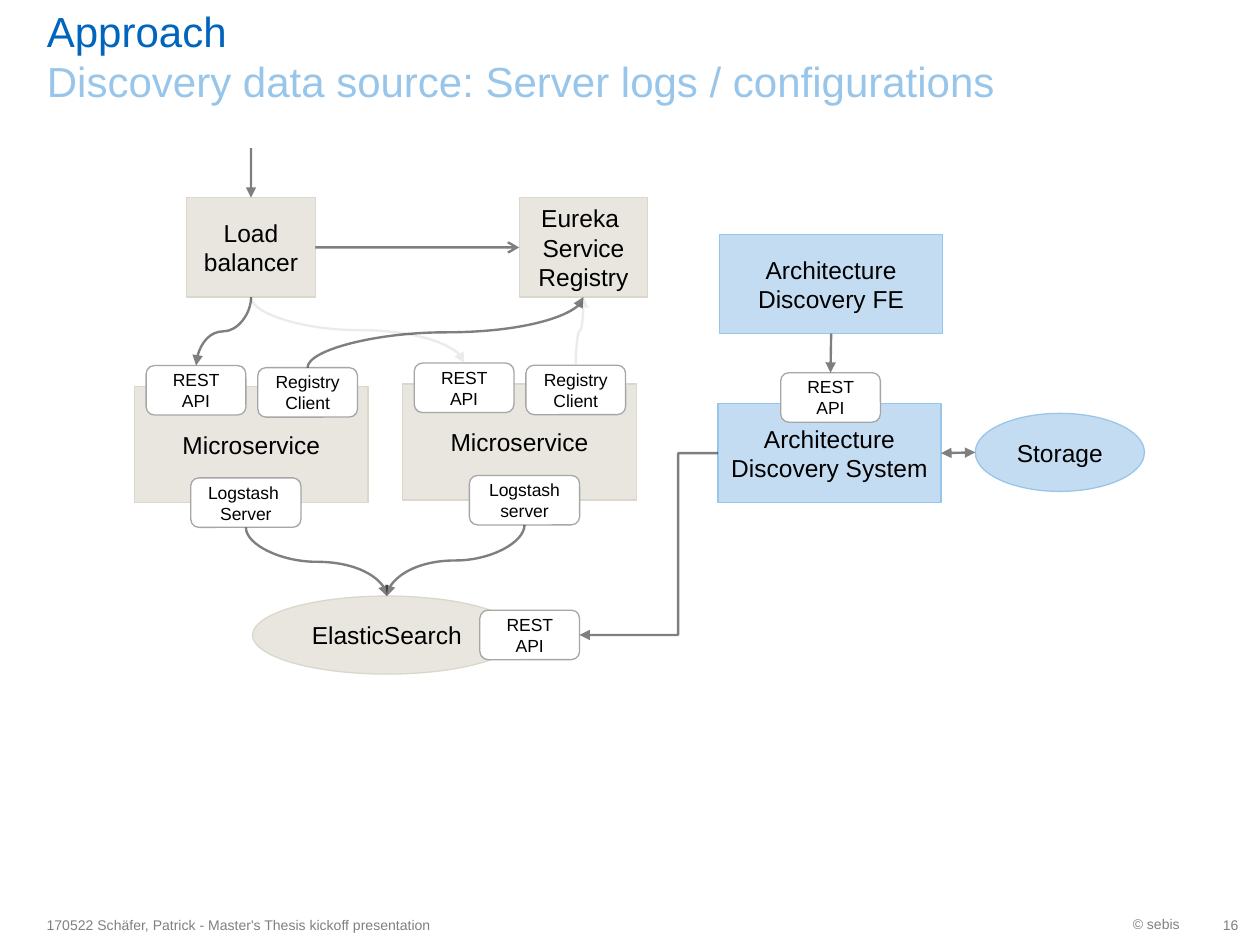
import pptx
import pptx.util
import pptx.dml.color
import pptx.enum.shapes
import pptx.enum.text
import pptx.oxml.ns
from dataclasses import dataclass
from lxml import etree

Pt = pptx.util.Pt
SHAPE = pptx.enum.shapes.MSO_SHAPE
ROUTE = pptx.enum.shapes.MSO_CONNECTOR
ALIGN = pptx.enum.text.PP_ALIGN
ANCHOR = pptx.enum.text.MSO_ANCHOR
TOP, LEFT, BOTTOM, RIGHT = range(4)  # connection sites of a rectangle


@dataclass(frozen=True)
class Theme:
    font: str = "Arial"
    title: str = "0065BD"
    subtitle: str = "98C6EA"
    footer: str = "808080"
    text: str = "000000"
    arrow: str = "000000"
    faint_arrow: str = "D9D9D9"
    service: tuple = ("E8E6DF", "DAD7CB")    # fill, outline
    discovery: tuple = ("C4DCF2", "98C6EA")
    interface: tuple = ("FFFFFF", "A6A6A6")
    title_size: int = 24
    node_size: int = 14
    interface_size: int = 10
    footer_size: int = 8
    outline: float = 0.75
    arrow_width: float = 1.35


THEME = Theme()
INTERFACE_SIZE = (57, 28.3)


def rgb(value):
    return pptx.dml.color.RGBColor.from_string(value)


def set_font(font, size, color):
    font.name, font.size = THEME.font, Pt(size)
    font.color.rgb = rgb(color)


def add_node(slide, text, box, colors=THEME.service, kind=SHAPE.RECTANGLE,
             size=THEME.node_size):
    node = slide.shapes.add_shape(kind, *map(Pt, box))
    node.shadow.inherit = False
    fill, outline = colors
    node.fill.solid()
    node.fill.fore_color.rgb = rgb(fill)
    node.line.color.rgb = rgb(outline)
    node.line.width = Pt(THEME.outline)
    frame = node.text_frame
    frame.text, frame.word_wrap = text, True
    frame.vertical_anchor = ANCHOR.MIDDLE
    for paragraph in frame.paragraphs:
        paragraph.alignment = ALIGN.CENTER
        set_font(paragraph.font, size, THEME.text)
    return node


def add_interface(slide, text, left, top, width=INTERFACE_SIZE[0]):
    return add_node(slide, text, (left, top, width, INTERFACE_SIZE[1]),
                    THEME.interface, SHAPE.ROUNDED_RECTANGLE, THEME.interface_size)


def site_point(node, site):
    x = {LEFT: node.left, RIGHT: node.left + node.width}
    y = {TOP: node.top, BOTTOM: node.top + node.height}
    return (x.get(site, node.left + node.width // 2),
            y.get(site, node.top + node.height // 2))


def add_arrow(slide, start, end, route=ROUTE.STRAIGHT, color=THEME.arrow,
              head=None, tail="triangle", bend=None):
    """Draw a half-transparent arrow between two points."""
    (x1, y1), (x2, y2) = start, end
    if route == ROUTE.CURVE:
        # Vertical S-curves are horizontal ones turned by 90 degrees
        cx, cy = (x1 + x2) // 2, (y1 + y2) // 2
        x1, y1, x2, y2 = cx + y1 - cy, cy - x1 + cx, cx + y2 - cy, cy - x2 + cx
    arrow = slide.shapes.add_connector(route, x1, y1, x2, y2)
    arrow.line.color.rgb = rgb(color)
    arrow.line.width = Pt(THEME.arrow_width)
    qn, properties = pptx.oxml.ns.qn, arrow._element.spPr
    if route == ROUTE.CURVE:
        properties.find(qn("a:xfrm")).set("rot", "5400000")
    if bend is not None:
        guides = properties.find(qn("a:prstGeom")).get_or_add_avLst()
        etree.SubElement(guides, qn("a:gd"), name="adj1", fmla=f"val {bend}")
    line = properties.find(qn("a:ln"))
    etree.SubElement(line.find(".//" + qn("a:srgbClr")), qn("a:alpha"), val="50000")
    for tag, style in (("a:headEnd", head), ("a:tailEnd", tail)):
        if style:
            etree.SubElement(line, qn(tag), type=style)
    etree.SubElement(properties, qn("a:effectLst"))


def link(slide, source, source_site, target, target_site, **style):
    add_arrow(slide, site_point(source, source_site),
              site_point(target, target_site), **style)


def add_heading(slide, box):
    heading = slide.shapes.title
    heading.left, heading.top, heading.width, heading.height = map(Pt, box)
    frame = heading.text_frame
    frame.margin_top = frame.margin_bottom = 0
    frame.vertical_anchor = ANCHOR.BOTTOM
    frame.auto_size = pptx.enum.text.MSO_AUTO_SIZE.NONE
    paragraph = frame.paragraphs[0]
    paragraph.alignment = ALIGN.LEFT
    topic = paragraph.add_run()
    topic.text = "Approach"
    set_font(topic.font, THEME.title_size, THEME.title)
    paragraph.add_line_break()
    subtitle = paragraph.add_run()
    subtitle.text = "Discovery data source: Server logs / configurations"
    set_font(subtitle.font, THEME.title_size, THEME.subtitle)


def add_footer(slide, left, top):
    entries = (
        ("170522 Schäfer, Patrick - Master's Thesis kickoff presentation", 0, 0, 340, ALIGN.LEFT),
        ("© sebis", 535, -0.5, 126.7, ALIGN.RIGHT),
        ("16", 645, 0, 43.1, ALIGN.RIGHT),
    )
    for text, dx, dy, width, alignment in entries:
        entry = slide.shapes.add_textbox(Pt(left + dx), Pt(top + dy), Pt(width), Pt(23))
        frame = entry.text_frame
        frame.text, frame.word_wrap = text, True
        frame.vertical_anchor = ANCHOR.MIDDLE
        if text == "16":
            frame.margin_right = 0
        frame.paragraphs[0].alignment = alignment
        set_font(frame.paragraphs[0].font, THEME.footer_size, THEME.footer)


def add_entry(slide, left, top):
    """Load balancer and registry, with the incoming request."""
    size = (73.5, 56.8)
    balancer = add_node(slide, "Load balancer", (left, top, *size))
    registry = add_node(slide, "Eureka \vService Registry", (left + 190, top, *size))
    link(slide, balancer, RIGHT, registry, LEFT, tail="arrow")
    x, y = site_point(balancer, TOP)
    add_arrow(slide, (x, y - Pt(28.3)), (x, y))
    return balancer, registry


def add_microservice(slide, left, top, balancer, registry, log_text, log_offset, color):
    """A service with its interfaces; returns the log server."""
    add_node(slide, "Microservice", (left, top, 133.4, 66.3))
    client = add_interface(slide, "Registry\nClient", left + 70.3, top - 10.8)
    log_server = add_interface(slide, log_text, left + log_offset, top + 52.2, 63)
    rest = add_interface(slide, "REST API", left + 6.5, top - 12)
    link(slide, balancer, BOTTOM, rest, TOP, route=ROUTE.CURVE, color=color)
    link(slide, client, TOP, registry, BOTTOM, route=ROUTE.CURVE, color=color)
    return log_server


def add_discovery(slide, left, top):
    """Front end, discovery system and storage; returns the system."""
    size = (127.5, 56.7)
    front_end = add_node(slide, "Architecture Discovery FE", (left + 0.9, top, *size),
                         THEME.discovery)
    system = add_node(slide, "Architecture Discovery System",
                      (left, top + 96.6, *size), THEME.discovery)
    storage = add_node(slide, "Storage", (left + 147, top + 102.2, 96.7, 44.6),
                       THEME.discovery, SHAPE.OVAL)
    link(slide, system, RIGHT, storage, LEFT, head="triangle")
    rest = add_interface(slide, "REST API", left + 35.8, top + 79)
    link(slide, front_end, BOTTOM, rest, TOP)
    return system


def add_search(slide, left, top, log_servers, system):
    """Search store fed by the log servers and read by discovery."""
    search = add_node(slide, "ElasticSearch", (left, top, 153.4, 44.6), kind=SHAPE.OVAL)
    for log_server in log_servers:
        link(slide, log_server, BOTTOM, search, TOP, route=ROUTE.CURVE)
    rest = add_interface(slide, "REST API", left + 129.8, top + 8.1)
    link(slide, system, LEFT, rest, RIGHT, route=ROUTE.ELBOW, bend=28800)


def main():
    deck = pptx.Presentation()
    deck.slide_width, deck.slide_height = Pt(720), Pt(540)
    slide = deck.slides.add_slide(deck.slide_layouts[5])
    add_heading(slide, (19.6, 3.6, 593.3, 56.9))
    add_footer(slide, 19.6, 517.2)
    entry = add_entry(slide, 106.7, 113)
    right_log = add_microservice(slide, 230.2, 219.5, *entry, "Logstash server",
                                 38, THEME.faint_arrow)
    left_log = add_microservice(slide, 77, 220.9, *entry, "Logstash \vServer",
                                32, THEME.arrow)
    system = add_discovery(slide, 410.3, 134)
    add_search(slide, 144.4, 340.6, (left_log, right_log), system)
    deck.save("out.pptx")


if __name__ == "__main__":
    main()
